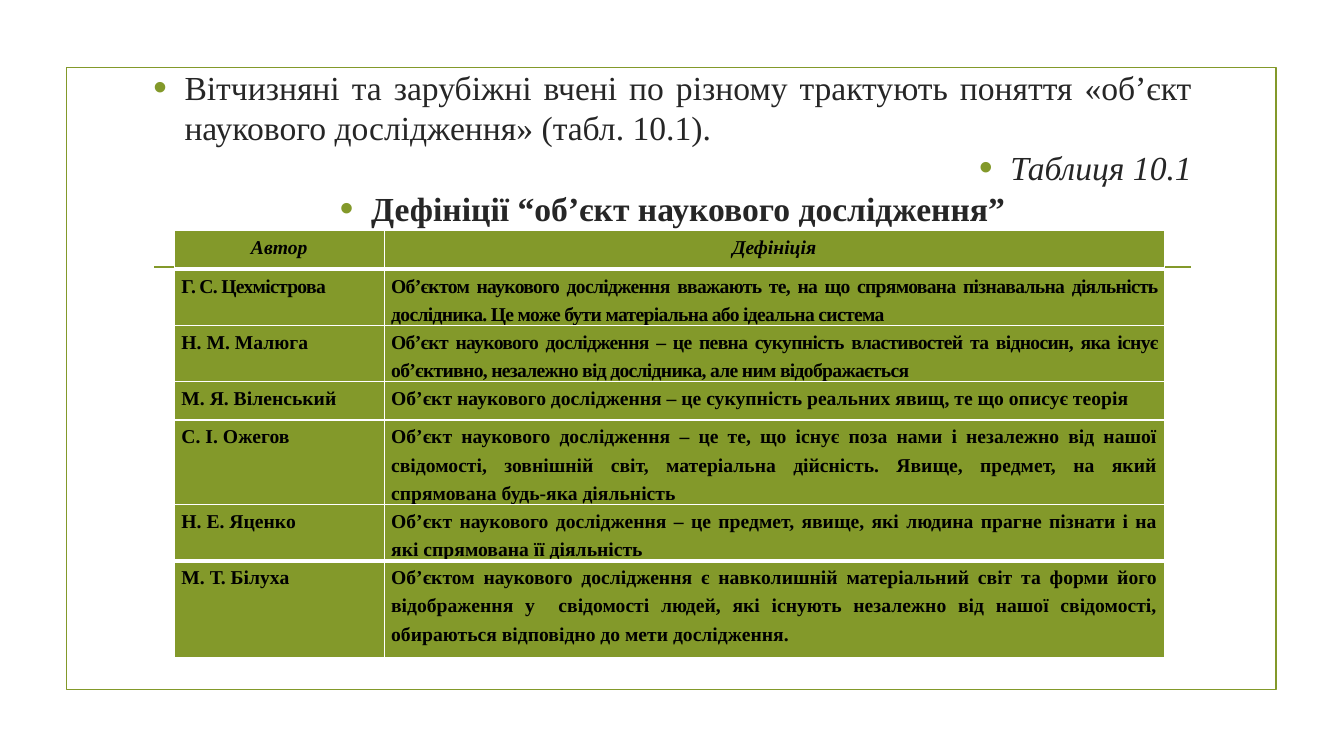
from lxml.etree import SubElement
from pptx import Presentation
from pptx.dml.color import RGBColor
from pptx.enum.shapes import MSO_CONNECTOR, MSO_SHAPE
from pptx.enum.text import MSO_ANCHOR, MSO_AUTO_SIZE, PP_ALIGN
from pptx.oxml.ns import qn
from pptx.util import Inches, Pt

OLIVE = RGBColor(0x83, 0x99, 0x2A)
WHITE = RGBColor(0xFF, 0xFF, 0xFF)
BLACK = RGBColor(0, 0, 0)
DARK = RGBColor(0x26, 0x26, 0x26)
FONT = "Times New Roman"

INTRO = [
    ("Вітчизняні та зарубіжні вчені по різному трактують поняття «об’єкт наукового дослідження» (табл. 10.1).",
     PP_ALIGN.JUSTIFY, False, False),
    ("Таблиця 10.1", PP_ALIGN.RIGHT, False, True),
    ("Дефініції “об’єкт наукового дослідження”", PP_ALIGN.CENTER, True, False),
]
ROWS = [
    ("Автор", "Дефініція"),
    ("Г. С. Цехмістрова",
     "Об’єктом наукового дослідження вважають те, на що спрямована пізнавальна діяльність дослідника. Це може бути матеріальна або ідеальна система"),
    ("Н. М. Малюга",
     "Об’єкт наукового дослідження – це певна сукупність властивостей та відносин, яка існує об’єктивно, незалежно від дослідника, але ним відображається"),
    ("М. Я. Віленський",
     "Об’єкт наукового дослідження – це сукупність реальних явищ, те що описує теорія"),
    ("С. І. Ожегов",
     "Об’єкт наукового дослідження – це те, що існує поза нами і незалежно від нашої свідомості, зовнішній світ, матеріальна дійсність. Явище, предмет, на який спрямована будь-яка діяльність"),
    ("Н. Е. Яценко",
     "Об’єкт наукового дослідження – це предмет, явище, які людина прагне пізнати і на які спрямована її діяльність"),
    ("М. Т. Білуха",
     "Об’єктом наукового дослідження є навколишній матеріальний світ та форми його відображення у  свідомості людей, які існують незалежно від нашої свідомості, обираються відповідно до мети дослідження."),
]
WIDTHS = [2.08, 7.74]
HEIGHTS = [0.38, 0.55, 0.47, 0.38, 0.61, 0.5, 0.96]
EDGES = [1, 3, 1, 1, 1, 1, 3, 1]
TIGHT = {(1, 0), (1, 1), (2, 1)}


def add_frame(slide, left, top, width, height):
    rect = slide.shapes.add_shape(
        MSO_SHAPE.RECTANGLE, Inches(left), Inches(top), Inches(width), Inches(height))
    rect.shadow.inherit = False
    rect.fill.background()
    rule_y = Inches(top + 1.98)
    rule = slide.shapes.add_connector(
        MSO_CONNECTOR.STRAIGHT, Inches(left + 0.87), rule_y,
        Inches(left + width - 0.85), rule_y)
    SubElement(rule._element.spPr, qn("a:effectLst"))
    for item in (rect, rule):
        item.line.color.rgb = OLIVE
        item.line.width = Pt(1.25)


def add_bullet(para):
    props = para._p.get_or_add_pPr()
    props.set("marL", str(Inches(0.31)))
    props.set("indent", str(Inches(-0.31)))
    color = SubElement(props, qn("a:buClr"))
    SubElement(color, qn("a:srgbClr"), val=str(OLIVE))
    SubElement(props, qn("a:buSzPct"), val="115000")
    SubElement(props, qn("a:buFont"), typeface="Arial")
    SubElement(props, qn("a:buChar"), char="•")


def style(para, size, color, bold, italic):
    for run in para.runs:
        font = run.font
        font.name, font.size = FONT, Pt(size)
        font.bold, font.italic = bold, italic
        font.color.rgb = color


def fill_body(slide, left, top, width, height):
    body = slide.placeholders[1]
    body.left, body.top = Inches(left), Inches(top)
    body.width, body.height = Inches(width), Inches(height)
    slide.shapes._spTree.append(body._element)
    frame = body.text_frame
    frame.word_wrap = True
    frame.auto_size = MSO_AUTO_SIZE.NONE
    frame.vertical_anchor = MSO_ANCHOR.TOP
    for i, (text, align, bold, italic) in enumerate(INTRO):
        para = frame.paragraphs[0] if i == 0 else frame.add_paragraph()
        para.text = text
        add_bullet(para)
        para.alignment = align
        para.space_before = para.space_after = Pt(0)
        para.line_spacing = 1.0
        style(para, 24, DARK, bold, italic)


def add_border(cell, side, width):
    line = SubElement(cell._tc.get_or_add_tcPr(), qn("a:ln" + side), w=str(Pt(width)))
    fill = SubElement(line, qn("a:solidFill"))
    SubElement(fill, qn("a:srgbClr"), val=str(WHITE))


def fill_cell(cell, text, row, col):
    for side, width in zip("LRTB", (1, 1, EDGES[row], EDGES[row + 1])):
        add_border(cell, side, width)
    cell.fill.solid()
    cell.fill.fore_color.rgb = OLIVE
    cell.margin_left = cell.margin_right = Inches(0.07)
    cell.margin_top = cell.margin_bottom = 0
    cell.text_frame.text = text
    para = cell.text_frame.paragraphs[0]
    para.line_spacing = 1.3
    if row == 0:
        para.alignment = PP_ALIGN.CENTER
    else:
        para.alignment = PP_ALIGN.JUSTIFY if col else PP_ALIGN.LEFT
    style(para, 14, BLACK, True, row == 0)
    if (row, col) in TIGHT:
        para.runs[0]._r.get_or_add_rPr().set("spc", "-50")


def add_grid(slide, left, top, width, height):
    holder = slide.shapes.add_table(
        len(ROWS), len(WIDTHS), Inches(left), Inches(top), Inches(width), Inches(height))
    table = holder.table
    for col, size in zip(table.columns, WIDTHS):
        col.width = Inches(size)
    for row, size in zip(table.rows, HEIGHTS):
        row.height = Inches(size)
    holder.height = Inches(height)
    for i, texts in enumerate(ROWS):
        for j, text in enumerate(texts):
            fill_cell(table.cell(i, j), text, i, j)


def main():
    deck = Presentation()
    deck.slide_width, deck.slide_height = Inches(13.33), Inches(7.5)
    slide = deck.slides.add_slide(deck.slide_layouts[1])
    title = slide.shapes.title._element
    title.getparent().remove(title)
    add_frame(slide, 0.66, 0.67, 12, 6.17)
    fill_body(slide, 1.42, 0.61, 10.5, 6.64)
    add_grid(slide, 1.73, 2.29, 9.82, 4.32)
    deck.save("out.pptx")


if __name__ == "__main__":
    main()
